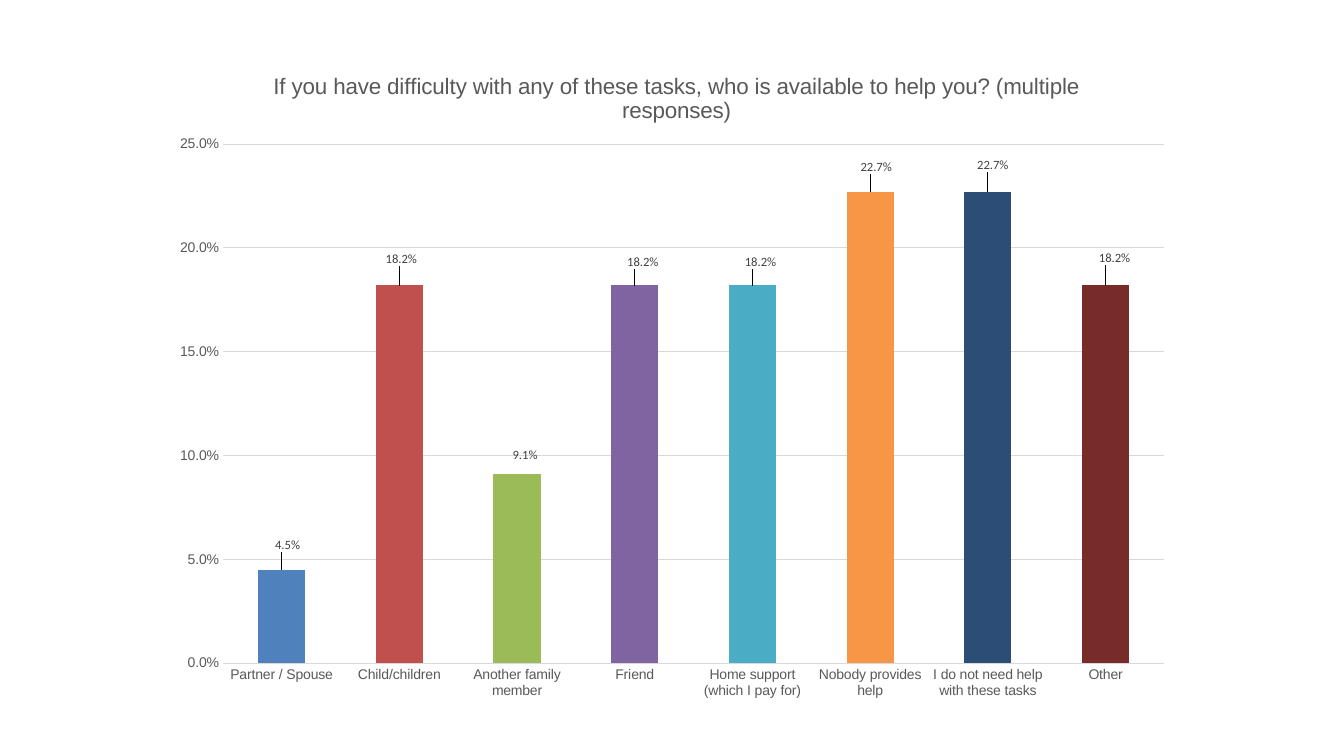
import lxml.etree
import pptx
import pptx.chart.data
import pptx.dml.color
import pptx.enum.chart
import pptx.oxml.ns
import pptx.util

TITLE = ("If you have difficulty with any of these tasks, "
         "who is available to help you? (multiple responses)")
COLOURS = {"text": "595959", "label": "404040", "grid": "D9D9D9", "base": "000000",
           "blue": "4F81BD", "red": "C0504D", "green": "9BBB59", "purple": "8064A2",
           "teal": "4BACC6", "orange": "F79646", "navy": "2C4D75", "maroon": "772C2A"}
# Answer, share, bar colour, label shift right and down in inches
HELPERS = [
    ("Partner / Spouse", 0.045, "blue", 0.06, -0.13),
    ("Child/children", 0.182, "red", 0.02, -0.15),
    ("Another family member", 0.091, "green", 0.08, -0.08),
    ("Friend", 0.182, "purple", 0.08, -0.12),
    ("Home support (which I pay for)", 0.182, "teal", 0.08, -0.12),
    ("Nobody provides help", 0.227, "orange", 0.06, -0.13),
    ("I do not need help with these tasks", 0.227, "navy", 0.05, -0.15),
    ("Other", 0.182, "maroon", 0.09, -0.16),
]
LEFT, TOP, WIDTH, HEIGHT = 1.58, 0.43, 10.17, 6.64
# Left, top, width, height of the plot within the chart, in inches
PLOT = (0.63, 1.0, 9.34, 5.15)
TITLE_AT = (1.09, 0.24)


def rgb(name):
    return pptx.dml.color.RGBColor.from_string(COLOURS[name])


def set_font(font, size, colour, face="Arial"):
    font.size = pptx.util.Pt(size)
    font.name = face
    font.bold = False
    font.color.rgb = rgb(colour)


def make_layout(lengths, target=None, edge=True):
    """Manual layout from lengths in inches, given as shares of the chart."""
    qn = pptx.oxml.ns.qn
    layout = lxml.etree.Element(qn("c:layout"))
    manual = lxml.etree.SubElement(layout, qn("c:manualLayout"))
    settings = [("layoutTarget", target)] if target else []
    if edge:
        settings += [("xMode", "edge"), ("yMode", "edge")]
    shares = [length / side for length, side in zip(lengths, (WIDTH, HEIGHT) * 2)]
    settings += [(tag, f"{share:.4f}") for tag, share in zip("xywh", shares)]
    for tag, value in settings:
        lxml.etree.SubElement(manual, qn("c:" + tag)).set("val", value)
    return layout


def replace_layout(parent, layout, position):
    for old in parent.findall(pptx.oxml.ns.qn("c:layout")):
        parent.remove(old)
    parent.insert(position, layout)


deck = pptx.Presentation()
deck.slide_width = pptx.util.Inches(13.33)
deck.slide_height = pptx.util.Inches(7.5)
slide = deck.slides.add_slide(deck.slide_layouts[6])

# Chart
answers = pptx.chart.data.CategoryChartData(number_format="0.0%")
answers.categories = [helper[0] for helper in HELPERS]
answers.add_series("Series 1", [helper[1] for helper in HELPERS])
chart = slide.shapes.add_chart(
    pptx.enum.chart.XL_CHART_TYPE.COLUMN_CLUSTERED,
    *map(pptx.util.Inches, (LEFT, TOP, WIDTH, HEIGHT)), answers).chart
set_font(chart.font, 10, "base", "Calibri")
chart.has_legend = False
plot_area = chart.plots[0]
plot_area.gap_width = 150
plot_area.vary_by_categories = False
replace_layout(chart.element.chart.plotArea, make_layout(PLOT, "inner"), 0)

# Title
chart.has_title = True
heading = chart.chart_title.text_frame
heading.text = TITLE
set_font(heading.paragraphs[0].runs[0].font, 16, "text")
replace_layout(chart.chart_title.element, make_layout(TITLE_AT), 1)
chart.chart_title.include_in_layout = False

# Axes
for axis in (chart.category_axis, chart.value_axis):
    axis.major_tick_mark = axis.minor_tick_mark = pptx.enum.chart.XL_TICK_MARK.NONE
    axis.format.line.fill.background()
    set_font(axis.tick_labels.font, 10, "text")
shares_axis = chart.value_axis
shares_axis.minimum_scale, shares_axis.maximum_scale = 0, 0.25
shares_axis.major_unit = 0.05
shares_axis.tick_labels.number_format = "0.0%"
shares_axis.tick_labels.number_format_is_linked = False
shares_axis.has_major_gridlines = True
grid = shares_axis.major_gridlines.format.line
grid.color.rgb = rgb("grid")
grid.width = pptx.util.Pt(0.75)

# Bars and their labels
bars = plot_area.series[0]
bars.invert_if_negative = False
for index, (_, _, colour, right, down) in enumerate(HELPERS):
    bar = bars.points[index]
    bar.format.fill.solid()
    bar.format.fill.fore_color.rgb = rgb(colour)
    set_font(bar.data_label.font, 9, "label", "Calibri")
    bar.data_label.position = pptx.enum.chart.XL_LABEL_POSITION.OUTSIDE_END
labels = bars.data_labels
labels.show_value = True
labels.number_format = "0.0%"
labels.number_format_is_linked = False
labels.position = pptx.enum.chart.XL_LABEL_POSITION.OUTSIDE_END
set_font(labels.font, 9, "label", "Calibri")
label_elements = bars.data_labels._element.findall(pptx.oxml.ns.qn("c:dLbl"))
for label, (_, _, _, right, down) in zip(label_elements, HELPERS):
    replace_layout(label, make_layout((right, down), edge=False), 1)

deck.save("out.pptx")
